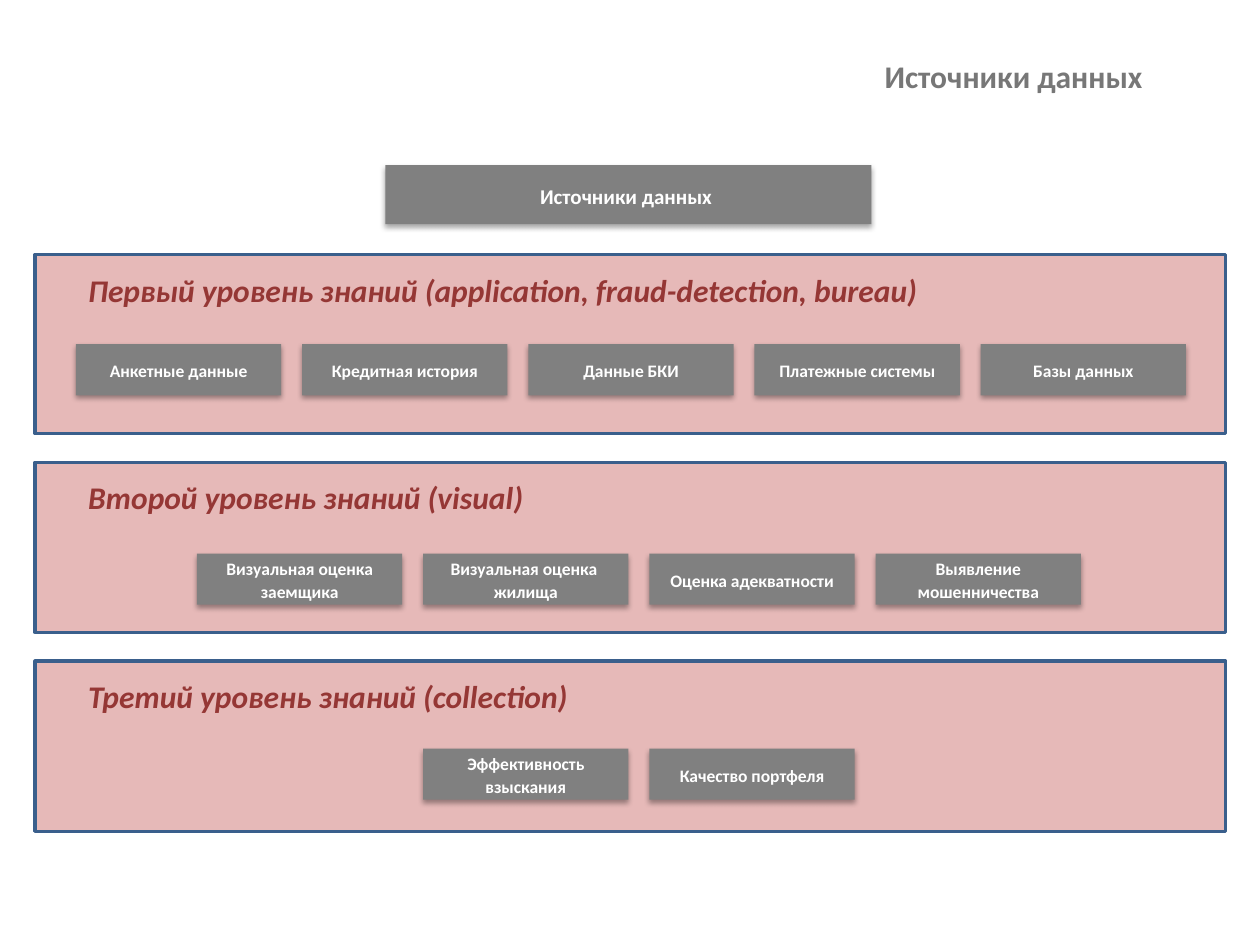
from lxml import etree
from pptx import Presentation
from pptx.dml.color import RGBColor
from pptx.enum.shapes import MSO_SHAPE
from pptx.enum.text import MSO_ANCHOR, MSO_AUTO_SIZE, PP_ALIGN
from pptx.oxml.ns import qn
from pptx.util import Cm, Pt

RECT = MSO_SHAPE.RECTANGLE
MIDDLE = MSO_ANCHOR.MIDDLE
CENTER, RIGHT, LEFT = PP_ALIGN.CENTER, PP_ALIGN.RIGHT, PP_ALIGN.LEFT

HEAD = "Источники данных"
GREY, WHITE = "808080", "FFFFFF"
BOX_W, BOX_H = 4.14, 1.03

# panel top, panel height, heading, first box left, box top, box labels
LEVELS = [
    (5.13, 3.61, "Первый уровень знаний (application, fraud-detection, bureau)",
     1.53, 6.94, ["Анкетные данные", "Кредитная история", "Данные БКИ",
                  "Платежные системы", "Базы данных"]),
    (9.32, 3.43, "Второй уровень знаний (visual)",
     3.97, 11.16, ["Визуальная оценка заемщика", "Визуальная оценка \nжилища",
                   "Оценка адекватности", "Выявление мошенничества"]),
    (13.33, 3.43, "Третий уровень знаний (collection)",
     8.53, 15.09, ["Эффективность взыскания", "Качество портфеля"]),
]
PITCH = 4.56


def color(code):
    return RGBColor.from_string(code)


def write(frame, text, size, code, align, italic=False):
    frame.text = text
    frame.word_wrap = True
    for para in frame.paragraphs:
        para.alignment = align
        for run in para.runs:
            font = run.font
            font.name, font.size = "Calibri", Pt(size)
            font.bold, font.italic = True, italic
            font.color.rgb = color(code)


def cast(effects, blur, dist, angle, alpha):
    """Add an outer black shadow to an effect list."""
    shade = etree.SubElement(
        effects, qn("a:outerShdw"), blurRad=str(Pt(blur)), dist=str(Pt(dist)),
        dir=str(angle * 60000), algn="ctr", rotWithShape="0")
    black = etree.SubElement(shade, qn("a:srgbClr"), val="000000")
    etree.SubElement(black, qn("a:alpha"), val=str(alpha * 1000))


def add_rect(slide, left, top, width, height, fill):
    rect = slide.shapes.add_shape(RECT, Cm(left), Cm(top), Cm(width), Cm(height))
    rect.shadow.inherit = False
    rect.fill.solid()
    rect.fill.fore_color.rgb = color(fill)
    return rect


def add_box(slide, left, top, width, height, text, size):
    box = add_rect(slide, left, top, width, height, GREY)
    box.line.fill.background()
    cast(box._element.spPr.find(qn("a:effectLst")), 3.1, 1.8, 90, 35)
    frame = box.text_frame
    frame.vertical_anchor = MIDDLE
    write(frame, text, size, WHITE, CENTER)
    for para in frame.paragraphs:
        para.line_spacing = 1.1


def add_level(slide, top, height, heading, left, row, labels):
    panel = add_rect(slide, 0.71, top, 24, height, "E6B9B8")
    panel.line.color.rgb = color("3A5F8C")
    panel.line.width = Pt(2)
    for i, label in enumerate(labels):
        add_box(slide, left + i * PITCH, row, BOX_W, BOX_H, label, 10)
    text = slide.shapes.add_textbox(Cm(1.53), Cm(top + 0.2), Cm(22.35), Cm(1.03))
    write(text.text_frame, heading, 18, "953735", LEFT, italic=True)


def set_title(slide):
    title = slide.shapes.title
    title.left, title.top = Cm(5.97), Cm(0.97)
    title.width, title.height = Cm(17.32), Cm(1.14)
    frame = title.text_frame
    frame.auto_size = MSO_AUTO_SIZE.NONE
    frame.vertical_anchor = MIDDLE
    write(frame, HEAD, 18, "777777", RIGHT)
    props = frame.paragraphs[0].runs[0].font._element
    effects = etree.Element(qn("a:effectLst"))
    props.find(qn("a:solidFill")).addnext(effects)
    cast(effects, 3, 3, 45, 43)


def main():
    deck = Presentation()
    deck.slide_width, deck.slide_height = Cm(25.4), Cm(19.05)
    slide = deck.slides.add_slide(deck.slide_layouts[5])
    set_title(slide)
    add_box(slide, 7.77, 3.33, 9.8, 1.19, HEAD + " ", 12)
    for level in LEVELS:
        add_level(slide, *level)
    deck.save("out.pptx")


if __name__ == "__main__":
    main()
